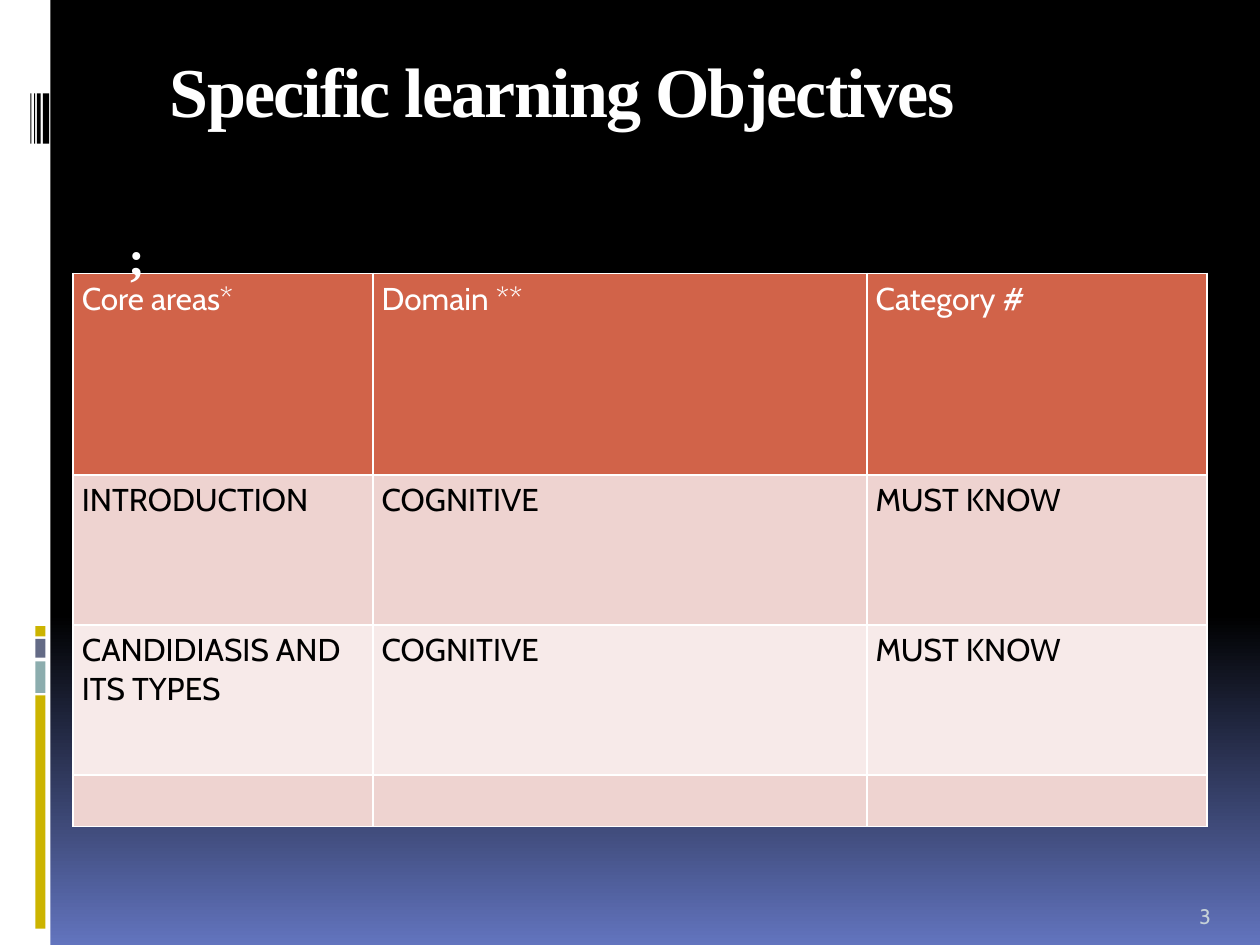
from lxml import etree
from pptx import Presentation
from pptx.dml.color import RGBColor
from pptx.enum.shapes import MSO_SHAPE
from pptx.enum.text import MSO_ANCHOR
from pptx.oxml.ns import qn
from pptx.util import Inches, Pt

RECT = MSO_SHAPE.RECTANGLE
TOP, BOTTOM = MSO_ANCHOR.TOP, MSO_ANCHOR.BOTTOM

THEME = {
    "white": "FFFFFF", "black": "000000", "blue": "6274BE",
    "gold": "CCB400", "teal": "8CADAE", "slate": "646B86",
    "head": "D16349", "odd": "EED3D0", "even": "F7EAE9", "page": "C5D1D7",
    "serif": "Times New Roman", "sans": "Cabin",
    "title": 40, "mark": 28, "cell": 18, "small": 12,
}

deck = Presentation()
deck.slide_width, deck.slide_height = Inches(10), Inches(7.5)
slide = deck.slides.add_slide(deck.slide_layouts[6])
shapes = slide.shapes


def place(x, y, w, h):
    """Turn percent of the slide's width and height into lengths."""
    wide, high = deck.slide_width / 100, deck.slide_height / 100
    return int(x * wide), int(y * high), int(w * wide), int(h * high)


def write(frame, text, size, face, color, bold=False):
    run = frame.paragraphs[0].add_run()
    run.text = text
    run.font.size = Pt(THEME[size])
    run.font.name = THEME[face]
    run.font.bold = bold
    run.font.color.rgb = RGBColor.from_string(THEME[color])
    return run


# Background: black down to 65 %, then fading to blue
back = slide.background.fill
back.gradient()
back.gradient_angle = 270
for stop, (pos, color) in zip(back.gradient_stops, [(0.65, "black"), (1, "blue")]):
    stop.position = pos
    stop.color.rgb = RGBColor.from_string(THEME[color])

# Side strip, colour blocks and barcode
blocks = [(0, 0, 4, 100, "white")]
blocks += [(2.8, y, 0.8, h, color) for y, h, color in [
    (73.6, 24.67, "gold"), (70, 3.33, "teal"), (67.6, 2, "slate"), (66.27, 1.07, "gold")]]
blocks += [(x, 9.87, w, 5.33, "black") for x, w in [
    (3.4, 0.5), (2.93, 0.3), (2.7, 0.1), (2.4, 0.1)]]
for *area, color in blocks:
    block = shapes.add_shape(RECT, *place(*area))
    block.shadow.inherit = False
    block.fill.solid()
    block.fill.fore_color.rgb = RGBColor.from_string(THEME[color])
    block.line.fill.background()

# Table
cols = [23.8, 39.2, 27]
rows = [21.33, 15.87, 15.87, 5.47]
fills = ["head", "odd", "even", "odd"]
words = [
    ["Core areas*", "Domain **", "Category #"],
    ["INTRODUCTION", "COGNITIVE", "MUST KNOW"],
    ["CANDIDIASIS AND ITS TYPES", "COGNITIVE", "MUST KNOW"],
    ["", "", ""],
]
area = place(5.8, 28.93, sum(cols), sum(rows))
table = shapes.add_table(len(rows), len(cols), *area).table
table.first_row = table.horz_banding = False
for col, share in zip(table.columns, cols):
    col.width = place(0, 0, share, 0)[2]
for r, share in enumerate(rows):
    table.rows[r].height = place(0, 0, 0, share)[3]
    for c, text in enumerate(words[r]):
        cell = table.cell(r, c)
        cell.margin_left = cell.margin_right = Inches(0.07)
        cell.margin_top = cell.margin_bottom = Inches(0.05)
        # Borders go in ahead of the fill
        props = cell._tc.get_or_add_tcPr()
        for side in ("lnL", "lnR", "lnT", "lnB"):
            edge = etree.SubElement(props, qn("a:" + side), w=str(Pt(1)))
            ink = etree.SubElement(edge, qn("a:solidFill"))
            etree.SubElement(ink, qn("a:srgbClr"), val=THEME["white"])
        cell.fill.solid()
        cell.fill.fore_color.rgb = RGBColor.from_string(THEME[fills[r]])
        if text:
            write(cell.text_frame, text, "cell", "sans", "black" if r else "white")

# Title, stray mark and page number
notes = [
    ((12.5, 4.4, 76, 16.13), TOP, "Specific learning Objectives", "title", "serif", "white", True),
    ((9.2, 23.33, 80.4, 7.6), TOP, ";", "mark", "serif", "white", True),
    ((94.2, 93.6, 5, 5.33), BOTTOM, "3", "small", "sans", "page", False),
]
for area, anchor, text, size, *look in notes:
    frame = shapes.add_textbox(*place(*area)).text_frame
    frame.word_wrap = True
    frame.vertical_anchor = anchor
    run = write(frame, text, size, *look)
    if size == "title":
        run.font._element.set("spc", "-100")

deck.save("out.pptx")
